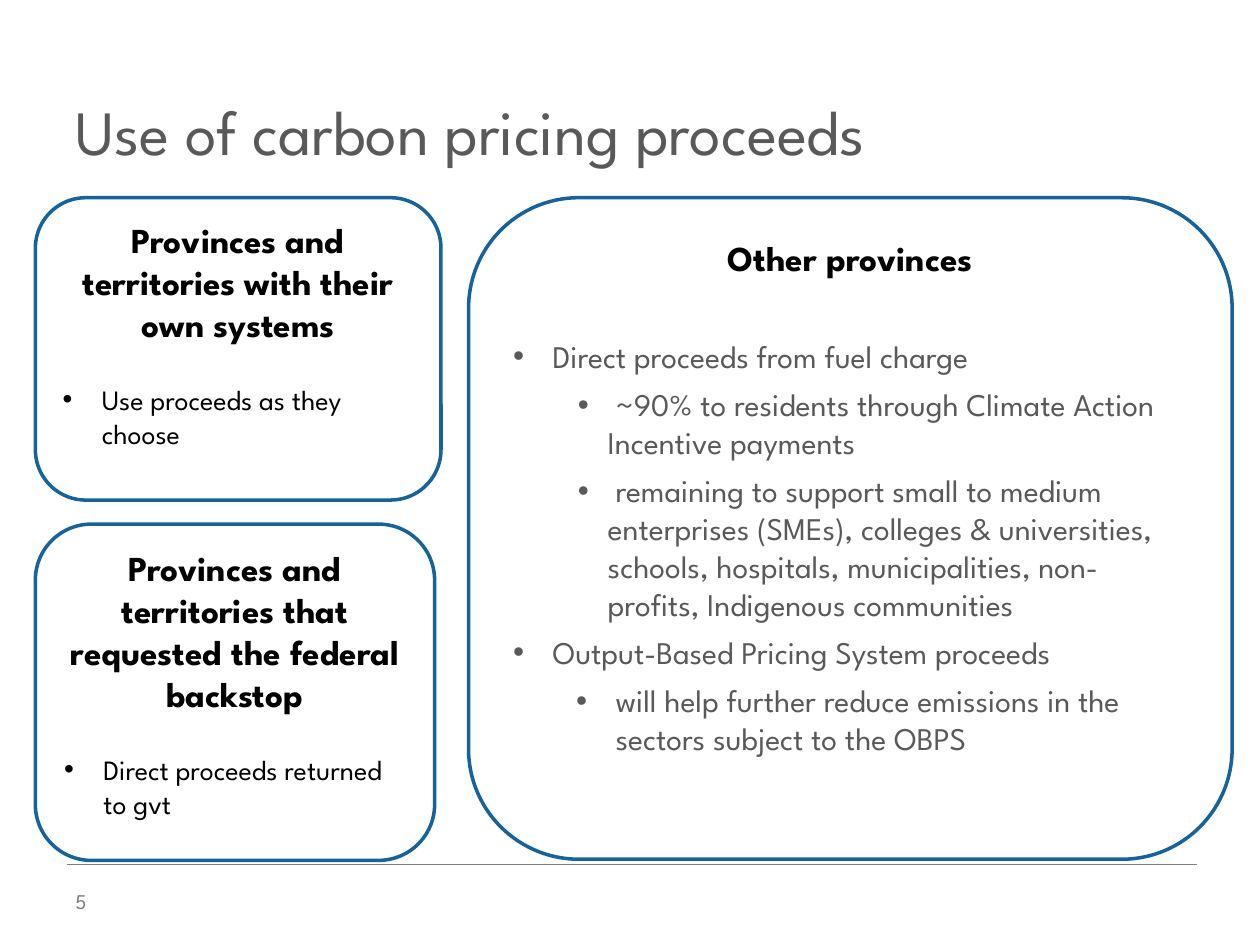
"""Build the slide on the use of carbon pricing proceeds."""
from lxml.etree import SubElement
from pptx import Presentation
from pptx.dml.color import RGBColor
from pptx.enum.shapes import MSO_CONNECTOR, MSO_SHAPE
from pptx.enum.text import MSO_ANCHOR as Anchor, PP_ALIGN as Align
from pptx.oxml.ns import qn
from pptx.util import Pt

FONT = "League Spartan"
WHITE = RGBColor(0xFF, 0xFF, 0xFF)
BLACK = RGBColor(0x00, 0x00, 0x00)
DARK_GRAY = RGBColor(0x59, 0x59, 0x59)
GRAY = RGBColor(0x7F, 0x7F, 0x7F)
BLUE = RGBColor(0x16, 0x62, 0x9B)

TITLE = "Use of carbon pricing proceeds"
PAGE_NUMBER = "5"
INDENTS = {"main": (22.5, -22.5), "detail": (54, -17), "note": (58.5, -22.5)}
PANELS = [
    {
        "heading": "Provinces and territories with their own systems",
        "frame": (20.2, 113, 231.8, 172.8),
        "gap": 21.6, "size": 16, "color": BLACK,
        "bullets": [("main", "Use proceeds as they choose")],
    },
    {
        "heading": "Provinces and territories that requested the federal backstop",
        "frame": (20.2, 299.5, 228.2, 192.2),
        "gap": 21.6, "size": 16, "color": BLACK,
        "bullets": [("main", "Direct proceeds returned to gvt")],
    },
    {
        "heading": "Other provinces",
        "frame": (267.8, 113, 436.3, 378),
        "gap": 33.6, "size": 18, "color": DARK_GRAY,
        "bullets": [
            ("main", "Direct proceeds from fuel charge"),
            ("detail", " ~90% to residents through Climate Action Incentive payments"),
            ("detail", " remaining to support small to medium enterprises (SMEs), "
                       "colleges & universities, schools, hospitals, municipalities, "
                       "non-profits, Indigenous communities"),
            ("main", "Output-Based Pricing System proceeds"),
            ("note", "will help further reduce emissions in the sectors subject to the OBPS"),
        ],
    },
]


def style(para, size, color, bold=False):
    font = para.font
    font.name, font.size, font.bold = FONT, Pt(size), bold
    font.color.rgb = color


def add_label(page, text, frame, size, color, anchor):
    text_frame = page.shapes.add_textbox(*map(Pt, frame)).text_frame
    text_frame.word_wrap = True
    text_frame.vertical_anchor = anchor
    para = text_frame.paragraphs[0]
    para.text = text
    style(para, size, color)


def add_bullet(text_frame, kind, text, size, color):
    para = text_frame.add_paragraph()
    para.text = text
    para.alignment = Align.LEFT
    para.level = 0 if kind == "main" else 1
    para.space_after = Pt(6)
    properties = para._p.get_or_add_pPr()
    margin, indent = INDENTS[kind]
    properties.set("marL", str(Pt(margin)))
    properties.set("indent", str(Pt(indent)))
    SubElement(properties, qn("a:buFont")).set("typeface", "Arial")
    SubElement(properties, qn("a:buChar")).set("char", "•")
    style(para, size, color)


def add_panel(page, panel):
    box = page.shapes.add_shape(MSO_SHAPE.ROUNDED_RECTANGLE, *map(Pt, panel["frame"]))
    box.shadow.inherit = False
    box.fill.solid()
    box.fill.fore_color.rgb = WHITE
    box.line.color.rgb = BLUE
    box.line.width = Pt(2)
    text_frame = box.text_frame
    text_frame.word_wrap = True
    text_frame.vertical_anchor = Anchor.TOP
    heading = text_frame.paragraphs[0]
    heading.text = panel["heading"]
    heading.alignment = Align.CENTER
    heading.space_after = Pt(panel["gap"])
    style(heading, 20, BLACK, bold=True)
    for kind, text in panel["bullets"]:
        add_bullet(text_frame, kind, text, panel["size"], panel["color"])


def add_footer_rule(page):
    rule = page.shapes.add_connector(
        MSO_CONNECTOR.STRAIGHT, Pt(38.2), Pt(494), Pt(684), Pt(494))
    rule.line.color.rgb = GRAY
    rule.line.width = Pt(0.25)
    SubElement(rule._element.spPr, qn("a:effectLst"))


def main():
    deck = Presentation()
    deck.slide_width, deck.slide_height = Pt(720), Pt(540)
    page = deck.slides.add_slide(deck.slide_layouts[6])
    add_footer_rule(page)
    add_label(page, TITLE, (36, 21.6, 648, 77.8), 36, DARK_GRAY, Anchor.BOTTOM)
    add_label(page, PAGE_NUMBER, (36, 500.4, 77, 28.8), 12, GRAY, Anchor.MIDDLE)
    for panel in PANELS:
        add_panel(page, panel)
    deck.save("out.pptx")


if __name__ == "__main__":
    main()
